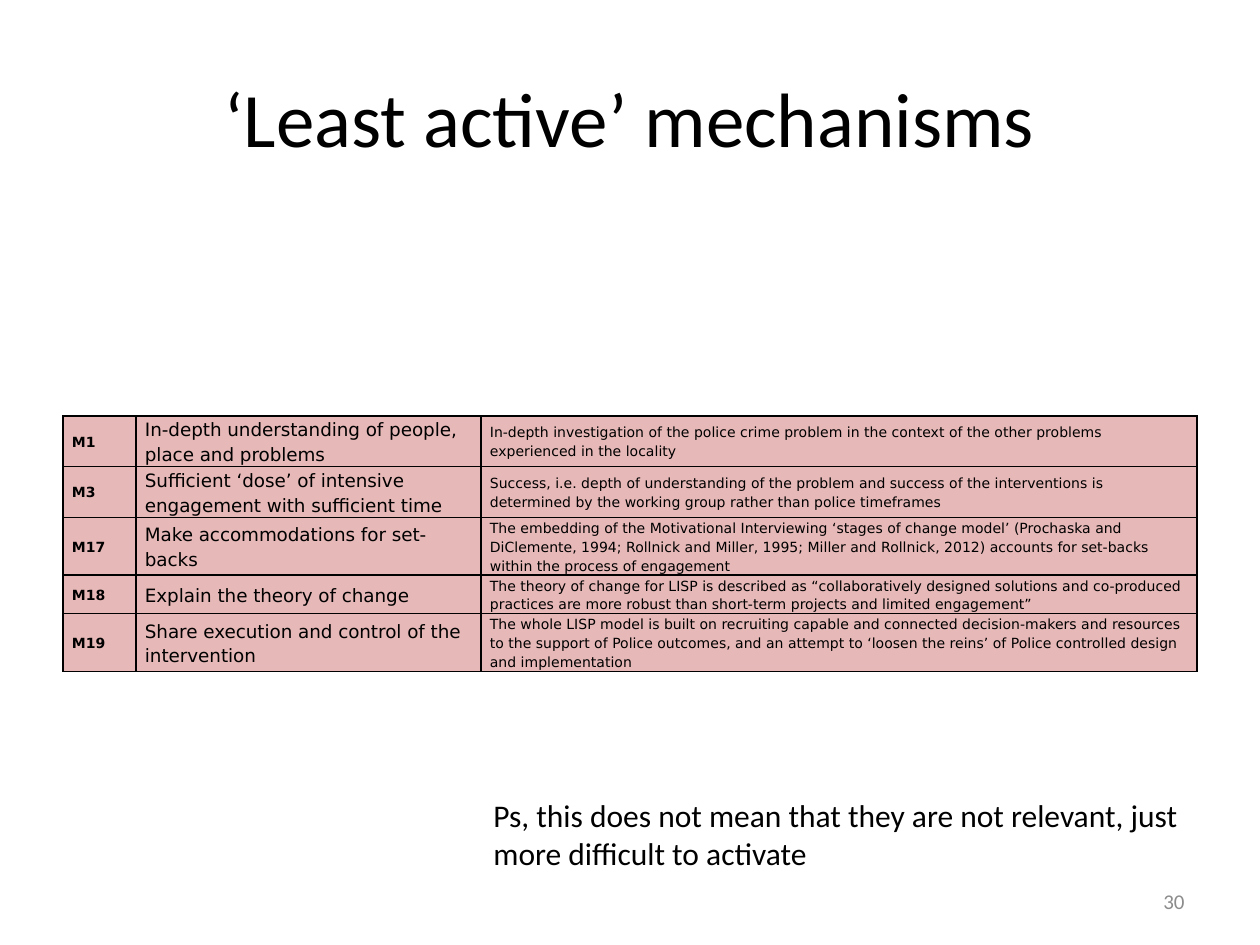
from dataclasses import dataclass

from lxml import etree
from pptx import Presentation
from pptx import util as u
from pptx.dml.color import RGBColor
from pptx.enum import text
from pptx.oxml.ns import qn
from pptx.slide import Slide
from pptx.table import _Cell

EMU_PER_PX = u.Inches(1) / 126
COLORS = {"ink": "000000", "muted": "8C8C8C", "rose": "E6B8B7"}
COLUMN_WIDTHS = (73, 345, 716)
CELL_SIZES = (8, 10.5, 8)


@dataclass(frozen=True)
class Box:
    left: int
    top: int
    width: int
    height: int


@dataclass(frozen=True)
class Mechanism:
    code: str
    name: str
    evidence: str
    height: int


MECHANISMS = (
    Mechanism("M1", "In-depth understanding of people, place and problems",
              "In-depth investigation of the police crime problem in the context of "
              "the other problems experienced in the locality", 37),
    Mechanism("M3", "Sufficient ‘dose’ of intensive engagement with sufficient time",
              "Success, i.e. depth of understanding of the problem and success of the "
              "interventions is determined by the working group rather than police "
              "timeframes", 37),
    Mechanism("M17", "Make accommodations for set-backs",
              "The embedding of the Motivational Interviewing ‘stages of change model’ "
              "(Prochaska and DiClemente, 1994; Rollnick and Miller, 1995; Miller and "
              "Rollnick, 2012) accounts for set-backs within the process of engagement", 56),
    Mechanism("M18", "Explain the theory of change",
              "The theory of change for LISP is described as “collaboratively designed "
              "solutions and co-produced practices are more robust than short-term "
              "projects and limited engagement”", 37),
    Mechanism("M19", "Share execution and control of the intervention",
              "The whole LISP model is built on recruiting capable and connected "
              "decision-makers and resources to the support of Police outcomes, and an "
              "attempt to ‘loosen the reins’ of Police controlled design and "
              "implementation", 56),
)


def px(length: int) -> u.Emu:
    return u.Emu(round(length * EMU_PER_PX))


def place(box: Box) -> tuple[u.Emu, ...]:
    return px(box.left), px(box.top), px(box.width), px(box.height)


def write(frame, content: str, *, size: float, font: str = "Calibri",
          color: str = "ink", bold: bool = False, align=text.PP_ALIGN.LEFT,
          line_spacing: float = 1.0, space_before: float = 0) -> None:
    """Fill a text frame, one paragraph for each line of content."""
    for index, line in enumerate(content.split("\n")):
        paragraph = frame.add_paragraph() if index else frame.paragraphs[0]
        paragraph.alignment = align
        paragraph.line_spacing = line_spacing
        paragraph.space_before = u.Pt(space_before)
        run = paragraph.add_run()
        run.text = line
        run.font.size = u.Pt(size)
        run.font.name = font
        run.font.bold = bold
        run.font.color.rgb = RGBColor.from_string(COLORS[color])


def add_text(slide: Slide, box: Box, content: str, *, wrap: bool = True,
             anchor=text.MSO_ANCHOR.MIDDLE, **style) -> None:
    frame = slide.shapes.add_textbox(*place(box)).text_frame
    frame.word_wrap = wrap
    frame.vertical_anchor = anchor
    write(frame, content, **style)


def add_borders(cell: _Cell) -> None:
    properties = cell._tc.get_or_add_tcPr()
    for side in ("lnL", "lnR", "lnT", "lnB"):
        line = etree.SubElement(properties, qn(f"a:{side}"), w=str(u.Pt(1)))
        fill = etree.SubElement(line, qn("a:solidFill"))
        etree.SubElement(fill, qn("a:srgbClr"), val=COLORS["ink"])


def format_cell(cell: _Cell) -> None:
    cell.margin_left = cell.margin_right = px(9)
    cell.margin_top = cell.margin_bottom = 0
    cell.vertical_anchor = text.MSO_ANCHOR.MIDDLE
    add_borders(cell)
    cell.fill.solid()
    cell.fill.fore_color.rgb = RGBColor.from_string(COLORS["rose"])


def add_mechanism_table(slide: Slide, box: Box) -> None:
    table = slide.shapes.add_table(len(MECHANISMS), len(COLUMN_WIDTHS), *place(box)).table
    table.first_row = table.horz_banding = False
    for column, width in zip(table.columns, COLUMN_WIDTHS):
        column.width = px(width)
    for row, mechanism in zip(table.rows, MECHANISMS):
        row.height = px(mechanism.height)
        contents = (mechanism.code, mechanism.name, mechanism.evidence)
        for index, (cell, content) in enumerate(zip(row.cells, contents)):
            format_cell(cell)
            write(cell.text_frame, content, size=CELL_SIZES[index], font="DejaVu Sans",
                  bold=index == 0, line_spacing=1.15, space_before=10)


def main() -> None:
    presentation = Presentation()
    presentation.slide_width, presentation.slide_height = px(1260), px(945)
    slide = presentation.slides.add_slide(presentation.slide_layouts[6])
    add_text(slide, Box(63, 38, 1134, 157), "‘Least active’ mechanisms",
             size=44, align=text.PP_ALIGN.CENTER)
    add_text(slide, Box(903, 876, 294, 50), "30",
             size=12, color="muted", align=text.PP_ALIGN.RIGHT)
    add_mechanism_table(slide, Box(63, 416, 1134, 256))
    add_text(slide, Box(481, 790, 726, 89),
             "Ps, this does not mean that they are not relevant, just\n"
             "more difficult to activate",
             size=18, wrap=False, anchor=text.MSO_ANCHOR.TOP)
    presentation.save("out.pptx")


if __name__ == "__main__":
    main()
